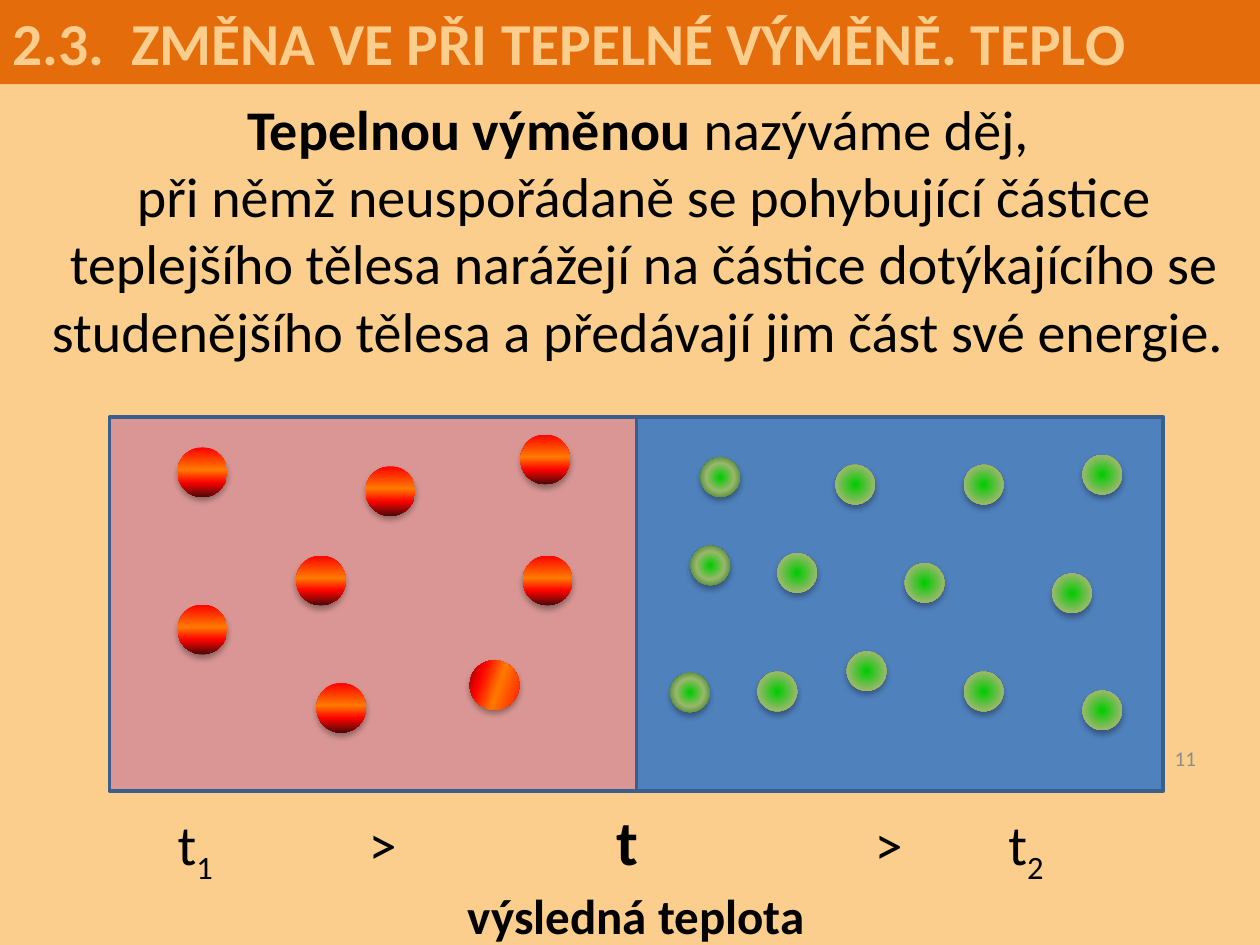
import lxml.etree
import pptx
import pptx.dml.color
import pptx.enum.shapes
import pptx.enum.text
import pptx.oxml
import pptx.oxml.ns
import pptx.util

Cm = pptx.util.Cm
Pt = pptx.util.Pt
ALIGN = pptx.enum.text.PP_ALIGN
ANCHOR = pptx.enum.text.MSO_ANCHOR
SHAPE = pptx.enum.shapes.MSO_SHAPE
qn = pptx.oxml.ns.qn

COLORS = {
    "sand": "FBCE8D", "orange": "E46C0A", "black": "000000", "gray": "8C8C8C",
    "warm_body": "D99694", "cool_body": "4F81BD", "outline": "3A5F8C",
}
HOT_STOPS = [(0, "FF0000"), (45, "FF7A00"), (70, "FF0300"), (100, "4D0808")]
COLD_STOPS = [(0, "00CC00"), (50, "9CB86E"), (100, "156B13")]
LINEAR = '<a:lin ang="5400000" scaled="0"/>'
RADIAL = ('<a:path path="circle"><a:fillToRect l="50000" t="50000" '
          'r="50000" b="50000"/></a:path>')

# left, top, rotation
HOT_PARTICLES = [
    (10.49, 8.76, 0), (7.37, 9.4, 0), (9.47, 13.31, 108.6), (3.58, 12.19, 0),
    (3.58, 9.02, 0), (10.54, 11.2, 0), (5.97, 11.2, 0), (6.38, 13.77, 0),
]
COLD_PARTICLES = [
    (14.12, 9.22, 0), (13.51, 13.56, 0), (13.92, 11, 0),
    (19.43, 9.37, 52.5), (16.84, 9.37, 52.5), (17.07, 13.13, 52.5),
    (21.82, 13.92, 52.5), (21.82, 9.17, 52.5), (21.21, 11.56, 52.5),
    (19.43, 13.54, 52.5), (18.24, 11.35, 52.5), (15.27, 13.54, 52.5),
    (15.67, 11.15, 52.5),
]


def rgb(name):
    return pptx.dml.color.RGBColor.from_string(COLORS[name])


def add_run(p, text, size=32, bold=False, color="black", baseline=0):
    r = p.add_run()
    r.text = text
    r.font.name = "Calibri"
    r.font.size = Pt(size)
    r.font.bold = bold
    r.font.color.rgb = rgb(color)
    if baseline:
        r.font._element.set("baseline", str(baseline * 1000))


def set_tabs(p, *stops):
    tabs = lxml.etree.SubElement(p._p.get_or_add_pPr(), qn("a:tabLst"))
    for stop in stops:
        lxml.etree.SubElement(tabs, qn("a:tab"), pos=str(Cm(stop)), algn="l")


class SlideBuilder:
    def __init__(self, prs):
        self.slide = prs.slides.add_slide(prs.slide_layouts[6])
        self.slide.background.fill.solid()
        self.slide.background.fill.fore_color.rgb = rgb("sand")

    def rect(self, x, y, w, h, fill, line=None):
        sp = self.slide.shapes.add_shape(SHAPE.RECTANGLE, Cm(x), Cm(y), Cm(w), Cm(h))
        sp.shadow.inherit = False
        sp.fill.solid()
        sp.fill.fore_color.rgb = rgb(fill)
        if line:
            sp.line.color.rgb = rgb(line)
            sp.line.width = Pt(2)
        else:
            sp.line.fill.background()
        return sp

    def text_box(self, x, y, w, h, align=ALIGN.LEFT, anchor=ANCHOR.TOP):
        """Add a wrapping text box and return its first paragraph."""
        tf = self.slide.shapes.add_textbox(Cm(x), Cm(y), Cm(w), Cm(h)).text_frame
        tf.word_wrap = True
        tf.vertical_anchor = anchor
        tf.paragraphs[0].alignment = align
        return tf.paragraphs[0], tf

    def particle(self, x, y, rotation, diameter, stops, direction):
        """Add a ball with a gradient fill and a soft shadow below it."""
        sp = self.slide.shapes.add_shape(
            SHAPE.OVAL, Cm(x), Cm(y), Cm(diameter), Cm(diameter))
        sp.rotation = rotation
        sp.line.fill.background()
        sp.fill.background()
        sp.shadow.inherit = False
        ns = pptx.oxml.ns.nsdecls("a")
        stop_xml = "".join(
            f'<a:gs pos="{pos * 1000}"><a:srgbClr val="{color}"/></a:gs>'
            for pos, color in stops)
        spPr = sp._element.spPr
        spPr.replace(spPr.find(qn("a:noFill")), pptx.oxml.parse_xml(
            f'<a:gradFill {ns} rotWithShape="1"><a:gsLst>{stop_xml}</a:gsLst>'
            f'{direction}</a:gradFill>'))
        spPr.find(qn("a:effectLst")).append(pptx.oxml.parse_xml(
            f'<a:outerShdw {ns} blurRad="{Pt(3.5)}" dist="{Pt(2.2)}" dir="5400000" '
            f'rotWithShape="0"><a:srgbClr val="{COLORS["black"]}">'
            f'<a:alpha val="32000"/></a:srgbClr></a:outerShdw>'))


def main():
    prs = pptx.Presentation()
    prs.slide_width, prs.slide_height = Cm(25.4), Cm(19.05)
    s = SlideBuilder(prs)

    body_x, body_y, body_w, body_h = 2.21, 8.41, 10.62, 7.54
    s.rect(body_x + body_w, body_y, body_w, body_h, "cool_body", "outline")

    tf = s.rect(0, 0, 25.4, 1.7, "orange").text_frame
    tf.word_wrap = True
    p = tf.paragraphs[0]
    p.alignment = ALIGN.LEFT
    set_tabs(p, 2.4)
    add_run(p, "2.3.\tZMĚNA VE PŘI TEPELNÉ VÝMĚNĚ. TEPLO", size=34, bold=True, color="sand")

    p, tf = s.text_box(0.58, 1.78, 24.82, 5.74, ALIGN.CENTER)
    add_run(p, "Tepelnou výměnou ", bold=True)
    add_run(p, "nazýváme děj, ")
    p.add_line_break()
    add_run(p, "při němž neuspořádaně se pohybující částice teplejšího tělesa "
               "narážejí na částice dotýkajícího se studenějšího tělesa "
               "a předávají jim část své energie. ")

    p, tf = s.text_box(18.44, 14.78, 5.92, 1.02, ALIGN.RIGHT, ANCHOR.MIDDLE)
    add_run(p, "11", size=12, color="gray")

    s.rect(body_x, body_y, body_w, body_h, "warm_body", "outline")
    for x, y, rotation in COLD_PARTICLES:
        s.particle(x, y, rotation, 0.8, COLD_STOPS, RADIAL)
    for x, y, rotation in HOT_PARTICLES:
        s.particle(x, y, rotation, 1, HOT_STOPS, LINEAR)

    p, tf = s.text_box(2.08, 16.05, 21.49, 3)
    set_tabs(p, 1.25, 5.1, 10.1, 15.3, 18)
    add_run(p, "\tt")
    add_run(p, "1", baseline=-25)
    add_run(p, "\t>\t")
    add_run(p, "t", size=36, bold=True)
    add_run(p, "\t>\tt")
    add_run(p, "2", baseline=-25)
    p = tf.add_paragraph()
    p.alignment = ALIGN.CENTER
    add_run(p, "výsledná teplota", size=28, bold=True)

    prs.save("out.pptx")


if __name__ == "__main__":
    main()
